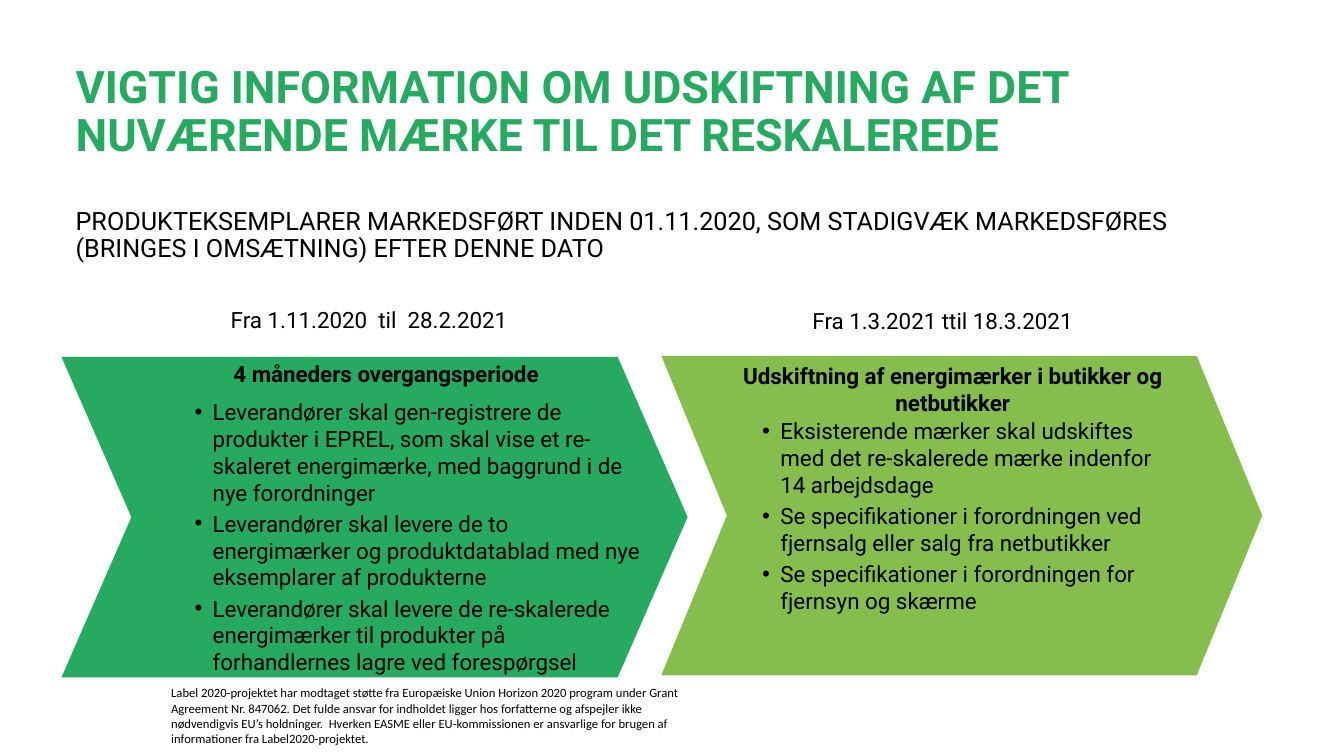
from dataclasses import dataclass

from lxml import etree
from pptx import Presentation
from pptx.dml.color import RGBColor
from pptx.enum.shapes import MSO_SHAPE
from pptx.enum.text import MSO_ANCHOR, MSO_AUTO_SIZE, PP_ALIGN
from pptx.oxml.ns import qn
from pptx.shapes.autoshape import Shape
from pptx.slide import Slide
from pptx.text.text import TextFrame, _Paragraph
from pptx.util import Inches, Pt

CHEVRON = MSO_SHAPE.CHEVRON
TOP = MSO_ANCHOR.TOP
NO_AUTOFIT = MSO_AUTO_SIZE.NONE
LEFT, CENTER = PP_ALIGN.LEFT, PP_ALIGN.CENTER
TWO_CONTENT_LAYOUT = 3
COLORS = {"green": "26AA5F", "lime": "85BE4C", "black": "000000"}


@dataclass(frozen=True)
class Area:
    left: float
    top: float
    width: float
    height: float


@dataclass(frozen=True)
class Phase:
    color: str
    notch: float
    chevron_area: Area
    period: str
    period_area: Area
    heading: str
    heading_area: Area
    duties: tuple[str, ...]
    duties_area: Area


PHASES = (
    Phase(
        "green", 0.218, Area(0.61, 3.54, 6.21, 3.18),
        "Fra 1.11.2020  til  28.2.2021", Area(2.19, 2.99, 3.65, 0.37),
        "4 måneders overgangsperiode", Area(2.19, 3.52, 3.28, 0.37),
        (
            "Leverandører skal gen-registrere de produkter i EPREL, som skal vise et "
            "re-skaleret energimærke, med baggrund i de nye forordninger",
            "Leverandører skal levere de to energimærker og produktdatablad med nye "
            "eksemplarer af produkterne",
            "Leverandører skal levere de re-skalerede energimærker til produkter på "
            "forhandlernes lagre ved forespørgsel",
        ),
        Area(1.63, 3.9, 4.82, 2.88),
    ),
    Phase(
        "lime", 0.205, Area(6.56, 3.53, 5.96, 3.17),
        "Fra 1.3.2021 ttil 18.3.2021", Area(7.96, 3, 3.34, 0.37),
        "Udskiftning af energimærker i butikker og netbutikker",
        Area(6.71, 3.54, 5.48, 0.91),
        (
            "Eksisterende mærker skal udskiftes med det re-skalerede mærke indenfor "
            "14 arbejdsdage",
            "Se specifikationer i forordningen ved fjernsalg eller salg fra netbutikker",
            "Se specifikationer i forordningen for fjernsyn og skærme",
        ),
        Area(7.26, 4.09, 4.44, 2.07),
    ),
)
TITLE = "VIGTIG INFORMATION OM UDSKIFTNING AF DET NUVÆRENDE MÆRKE TIL DET RESKALEREDE"
SUBTITLE = (
    "PRODUKTEKSEMPLARER MARKEDSFØRT INDEN 01.11.2020, SOM STADIGVÆK MARKEDSFØRES "
    "(BRINGES I OMSÆTNING) EFTER DENNE DATO"
)
FUNDING = (
    "Label 2020-projektet har modtaget støtte fra Europæiske Union Horizon 2020 program "
    "under Grant Agreement Nr. 847062. Det fulde ansvar for indholdet ligger hos "
    "forfatterne og afspejler ikke nødvendigvis EU’s holdninger.  Hverken EASME eller "
    "EU-kommissionen er ansvarlige for brugen af informationer fra Label2020-projektet."
)


def place(shape: Shape, area: Area) -> TextFrame:
    shape.left, shape.top = Inches(area.left), Inches(area.top)
    shape.width, shape.height = Inches(area.width), Inches(area.height)
    frame = shape.text_frame
    frame.word_wrap = True
    frame.auto_size = NO_AUTOFIT
    frame.vertical_anchor = TOP
    return frame


def next_paragraph(frame: TextFrame, index: int) -> _Paragraph:
    return frame.add_paragraph() if index else frame.paragraphs[0]


def add_run(para: _Paragraph, text: str, size: float = 16, color: str = "black",
            bold: bool = False, font: str = "Roboto") -> None:
    span = para.add_run()
    span.text = text
    span.font.name = font
    span.font.size = Pt(size)
    span.font.bold = bold
    span.font.color.rgb = RGBColor.from_string(COLORS[color])


def add_label(slide: Slide, area: Area, text: str, size: float = 16,
              bold: bool = False, font: str = "Roboto", align: PP_ALIGN = LEFT) -> None:
    box = slide.shapes.add_textbox(0, 0, 0, 0)
    para = place(box, area).paragraphs[0]
    para.alignment = align
    add_run(para, text, size=size, bold=bold, font=font)


def add_bullet(para: _Paragraph) -> None:
    properties = para._p.get_or_add_pPr()
    properties.set("marL", str(Inches(0.38)))
    properties.set("indent", str(Inches(-0.18)))
    etree.SubElement(properties, qn("a:buFont"), typeface="Arial")
    etree.SubElement(properties, qn("a:buChar"), char="•")
    tabs = etree.SubElement(properties, qn("a:tabLst"))
    etree.SubElement(tabs, qn("a:tab"), pos=str(Inches(0.5)), algn="l")


def fill_title(title: Shape) -> None:
    frame = place(title, Area(0.65, 0.59, 12.01, 2.1))
    lines = ((TITLE, 32, "green", True), (SUBTITLE, 18, "black", False))
    for index, (text, size, color, bold) in enumerate(lines):
        para = next_paragraph(frame, index)
        para.alignment = LEFT
        para.line_spacing = 0.9
        para.space_before = Pt(34 * index)
        add_run(para, text, size=size, color=color, bold=bold)


def fill_duties(body: Shape, phase: Phase) -> None:
    frame = place(body, phase.duties_area)
    for index, duty in enumerate(phase.duties):
        para = next_paragraph(frame, index)
        add_bullet(para)
        para.space_before = Pt(0)
        para.space_after = Pt(3)
        add_run(para, duty)


def add_phase(slide: Slide, phase: Phase, body: Shape) -> None:
    chevron = slide.shapes.add_shape(CHEVRON, 0, 0, 0, 0)
    place(chevron, phase.chevron_area)
    chevron.adjustments[0] = phase.notch
    chevron.shadow.inherit = False
    chevron.fill.solid()
    chevron.fill.fore_color.rgb = RGBColor.from_string(COLORS[phase.color])
    chevron.line.fill.background()
    body.element.addprevious(chevron.element)
    fill_duties(body, phase)
    add_label(slide, phase.period_area, phase.period)
    add_label(slide, phase.heading_area, phase.heading, bold=True, align=CENTER)


def main() -> None:
    deck = Presentation()
    deck.slide_width, deck.slide_height = Inches(13.33), Inches(7.5)
    page = deck.slides.add_slide(deck.slide_layouts[TWO_CONTENT_LAYOUT])
    title, *bodies = page.placeholders
    fill_title(title)
    for phase, body in zip(PHASES, bodies):
        add_phase(page, phase, body)
    add_label(page, Area(1.6, 6.75, 5.37, 0.74), FUNDING, size=9, font="Calibri")
    deck.save("out.pptx")


if __name__ == "__main__":
    main()
